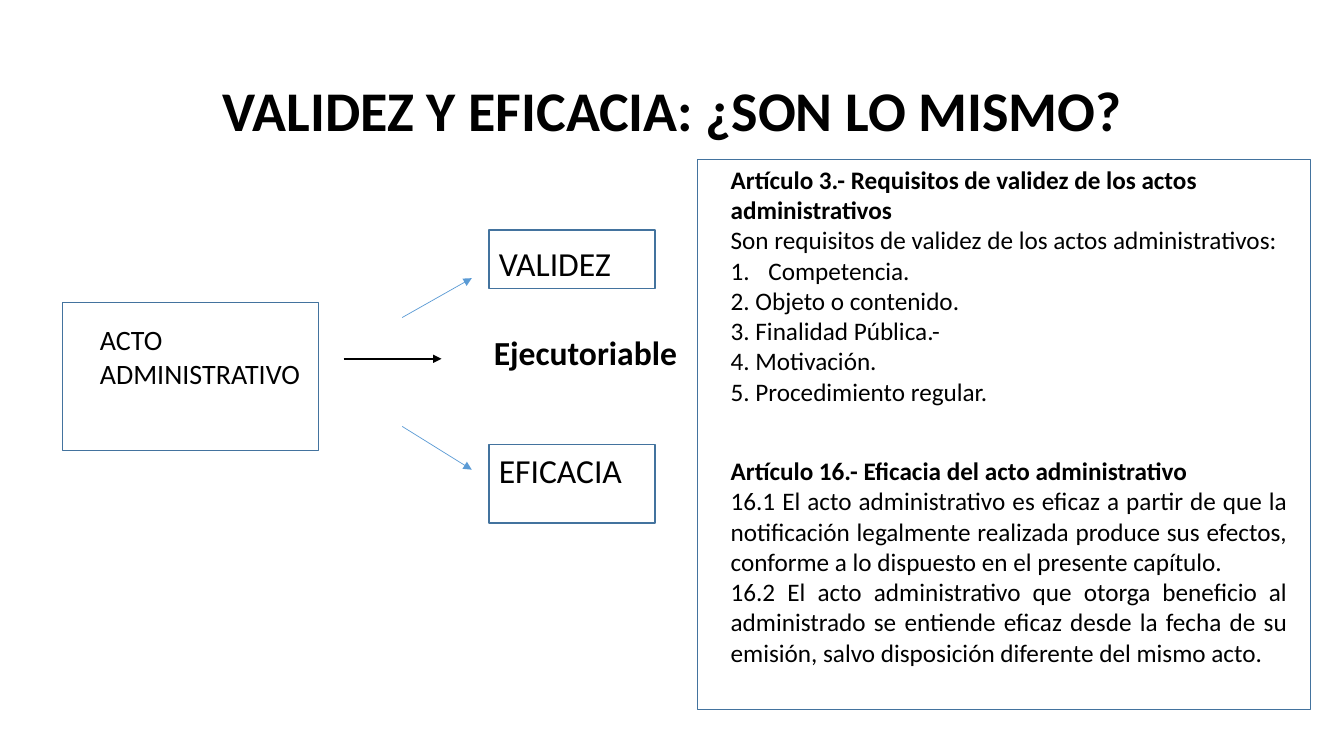
from dataclasses import dataclass

from lxml import etree
from pptx import Presentation
from pptx.dml.color import RGBColor
from pptx.enum.shapes import MSO_CONNECTOR, MSO_SHAPE
from pptx.enum.text import MSO_ANCHOR, PP_ALIGN
from pptx.oxml.ns import qn
from pptx.util import Pt

LEFT, CENTER, JUSTIFY = PP_ALIGN.LEFT, PP_ALIGN.CENTER, PP_ALIGN.JUSTIFY
TOP, MIDDLE = MSO_ANCHOR.TOP, MSO_ANCHOR.MIDDLE
RECTANGLE, STRAIGHT = MSO_SHAPE.RECTANGLE, MSO_CONNECTOR.STRAIGHT


@dataclass(frozen=True)
class Theme:
    font: str = "Calibri"
    ink: str = "000000"
    frame: str = "43739E"
    arrow: str = "5B9BD5"
    title: int = 40
    concept: int = 24
    act: int = 20
    article: int = 18


THEME = Theme()
TITLE = "VALIDEZ Y EFICACIA: ¿SON LO MISMO?"
# Position and size in points: left, top, width, height
TITLE_AREA = (66.24, 28.8, 828, 104.4)
LABELS = [
    (["ACTO", "ADMINISTRATIVO"], (64.2, 226.8, 181.4, 55.7), THEME.act, False),
    (["VALIDEZ"], (349.2, 169.9, 194.4, 36.3), THEME.concept, False),
    (["EFICACIA"], (349.2, 317.5, 149, 36.3), THEME.concept, False),
    (["Ejecutoriable"], (345.6, 233.3, 185.8, 36.3), THEME.concept, True),
]
ARTICLES = [
    ("Artículo 3.- Requisitos de validez de los actos administrativos",
     ["Son requisitos de validez de los actos administrativos:",
      ("1.", "Competencia."),
      "2. Objeto o contenido.",
      "3. Finalidad Pública.-",
      "4. Motivación.",
      "5. Procedimiento regular."],
     (514.8, 113.8, 421.2, 181.4)),
    ("Artículo 16.- Eficacia del acto administrativo",
     ["16.1 El acto administrativo es eficaz a partir de que la notificación "
      "legalmente realizada produce sus efectos, conforme a lo dispuesto en el "
      "presente capítulo.",
      "16.2 El acto administrativo que otorga beneficio al administrado se "
      "entiende eficaz desde la fecha de su emisión, salvo disposición diferente "
      "del mismo acto."],
     (514.8, 321.8, 411.8, 159.8)),
]
FRAMES = [
    (44.6, 216, 182.9, 105.8),
    (349.2, 164.2, 118.8, 41.8),
    (349.2, 317.5, 118.8, 56.2),
    (498.2, 113.8, 437.8, 393.1),
]
# Start x, start y, end x, end y, colour, width
ARROWS = [
    (287.3, 226.8, 337, 198.7, THEME.arrow, 0.5),
    (287.3, 304.6, 337, 335.5, THEME.arrow, 0.5),
    (245.5, 256.3, 315.4, 256.3, THEME.ink, 1.5),
]
NUMBER_INDENT = 27


def points(values):
    return [Pt(value) for value in values]


def add_text(slide, area, lines, size, anchor=TOP):
    """Each line is (text, bold, alignment); returns the paragraphs."""
    frame = slide.shapes.add_textbox(*points(area)).text_frame
    frame.word_wrap = True
    frame.vertical_anchor = anchor
    for index, (text, bold, alignment) in enumerate(lines):
        para = frame.paragraphs[0] if index == 0 else frame.add_paragraph()
        para.text = text
        para.alignment = alignment
        para.font.name = THEME.font
        para.font.size = Pt(size)
        para.font.bold = bold
        para.font.color.rgb = RGBColor.from_string(THEME.ink)
    return frame.paragraphs


def number_paragraph(para):
    properties = para._p.get_or_add_pPr()
    properties.set("marL", str(Pt(NUMBER_INDENT)))
    properties.set("indent", str(-Pt(NUMBER_INDENT)))
    numbering = etree.Element(qn("a:buAutoNum"), type="arabicPeriod")
    defaults = properties.find(qn("a:defRPr"))
    if defaults is None:
        properties.append(numbering)
    else:
        defaults.addprevious(numbering)


def add_article(slide, heading, body, area):
    lines = [(heading, True, LEFT)]
    for item in body:
        text = item if isinstance(item, str) else item[1]
        lines.append((text, False, JUSTIFY))
    paragraphs = add_text(slide, area, lines, THEME.article)
    for para, item in zip(paragraphs[1:], body):
        if isinstance(item, tuple):
            number_paragraph(para)


def add_frame(slide, area):
    box = slide.shapes.add_shape(RECTANGLE, *points(area))
    box.shadow.inherit = False
    box.fill.background()
    box.line.color.rgb = RGBColor.from_string(THEME.frame)
    box.line.width = Pt(1)


def add_arrow(slide, ends, color, width):
    arrow = slide.shapes.add_connector(STRAIGHT, *points(ends))
    arrow.line.color.rgb = RGBColor.from_string(color)
    arrow.line.width = Pt(width)
    etree.SubElement(arrow.line._get_or_add_ln(), qn("a:tailEnd"), type="triangle")
    etree.SubElement(arrow._element.spPr, qn("a:effectLst"))


def main():
    deck = Presentation()
    deck.slide_width, deck.slide_height = Pt(960), Pt(540)
    slide = deck.slides.add_slide(deck.slide_layouts[6])

    title = add_text(slide, TITLE_AREA, [(TITLE, True, CENTER)], THEME.title, MIDDLE)
    title[0].line_spacing = 0.9
    for words, area, size, bold in LABELS:
        add_text(slide, area, [(word, bold, LEFT) for word in words], size)
    for heading, body, area in ARTICLES:
        add_article(slide, heading, body, area)
    for area in FRAMES:
        add_frame(slide, area)
    for *ends, color, width in ARROWS:
        add_arrow(slide, ends, color, width)

    deck.save("out.pptx")


if __name__ == "__main__":
    main()
